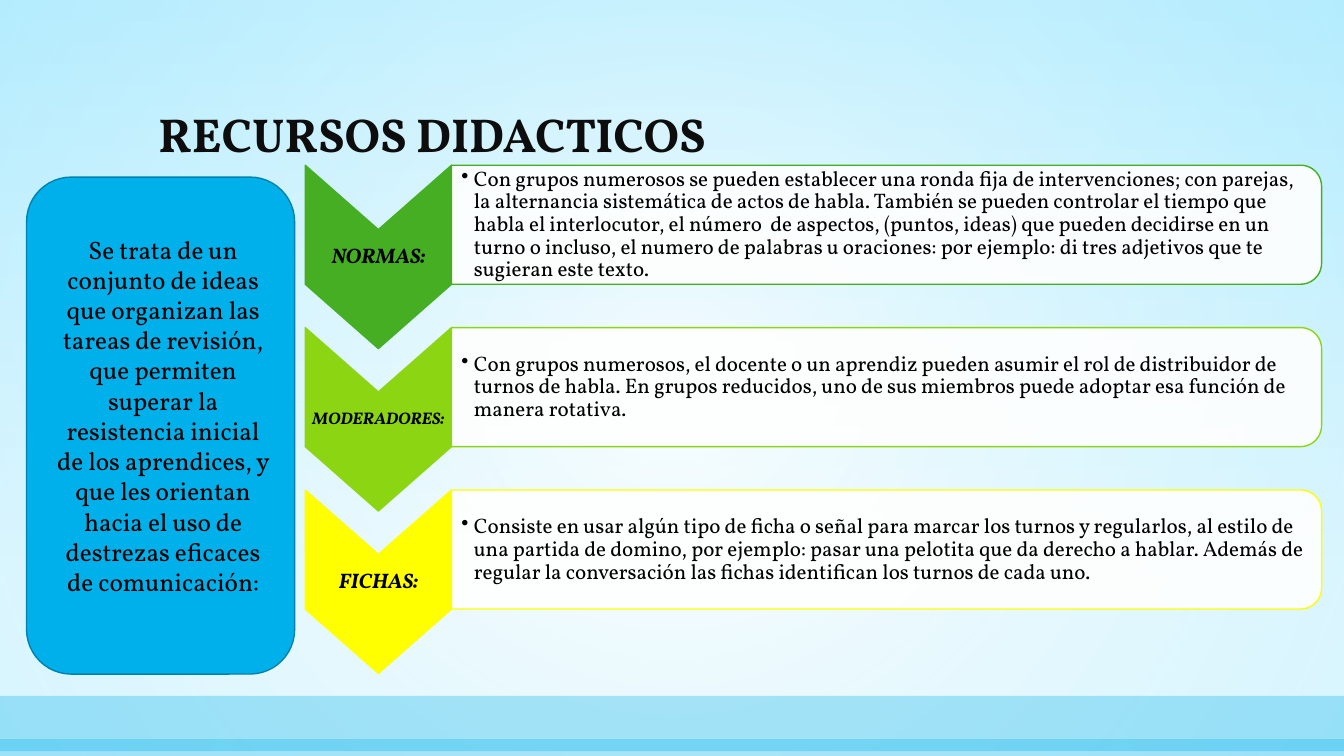
import math
from lxml import etree
from pptx import Presentation
from pptx.dml.color import RGBColor
from pptx.enum.shapes import MSO_SHAPE
from pptx.enum.text import MSO_ANCHOR, MSO_AUTO_SIZE, PP_ALIGN
from pptx.oxml.ns import qn
from pptx.util import Pt

RECT, ROUND = MSO_SHAPE.RECTANGLE, MSO_SHAPE.ROUNDED_RECTANGLE
TOP, MIDDLE, BOTTOM = MSO_ANCHOR.TOP, MSO_ANCHOR.MIDDLE, MSO_ANCHOR.BOTTOM
LEFT, CENTER = PP_ALIGN.LEFT, PP_ALIGN.CENTER
NO_FIT = MSO_AUTO_SIZE.NONE
FONT = "Vollkorn"
WIDE, HIGH = 960, 540
ROW_TOP, ROW_STEP = 118, 116
TAG_LEFT, TAG_WIDE, TAG_HIGH, NOTCH = 218, 104.5, 131, 46
CARD_WIDE, CARD_HIGH, CURVE = 621.5, 85, 15

INTRO = ("Se trata de un conjunto de ideas que organizan las tareas de revisión, "
         "que permiten superar la resistencia inicial de los aprendices, y que les "
         "orientan hacia el uso de destrezas eficaces de comunicación:")
ROWS = [
    ("NORMAS:", 15, "45AE22",
     "Con grupos numerosos se pueden establecer una ronda fija de intervenciones; "
     "con parejas, la alternancia sistemática de actos de habla. También se pueden "
     "controlar el tiempo que habla el interlocutor, el número  de aspectos, (puntos, "
     "ideas) que pueden decidirse en un turno o incluso, el numero de palabras u "
     "oraciones: por ejemplo: di tres adjetivos que te sugieran este texto."),
    ("MODERADORES:", 12, "8CD513",
     "Con grupos numerosos, el docente o un aprendiz pueden asumir el rol de "
     "distribuidor de turnos de habla. En grupos reducidos, uno de sus miembros puede "
     "adoptar esa función de manera rotativa."),
    ("FICHAS:", 15, "FFFF00",
     "Consiste en usar algún tipo de ficha o señal para marcar los turnos y "
     "regularlos, al estilo de una partida de domino, por ejemplo: pasar una pelotita "
     "que da derecho a hablar. Además de regular la conversación las fichas "
     "identifican los turnos de cada uno."),
]


def rgb(color):
    return RGBColor.from_string(color)


def add(parent, tag, **attrs):
    return etree.SubElement(parent, qn(tag), {k: str(v) for k, v in attrs.items()})


def fade(node, alpha):
    """Set the opacity, in percent, of a colour element."""
    add(node, "a:alpha", val=alpha * 1000)


def paint(shape, fill, line=None, alpha=100):
    shape.shadow.inherit = False
    shape.fill.solid()
    shape.fill.fore_color.rgb = rgb(fill)
    if alpha < 100:
        fade(shape.fill._xPr.find(qn("a:solidFill"))[0], alpha)
    if line:
        shape.line.color.rgb = rgb(line)
        shape.line.width = Pt(1)
    else:
        shape.line.fill.background()


def blend(props, stops, radial=False):
    """Replace a solid fill by a gradient of (place, colour, opacity) stops."""
    grad = etree.Element(qn("a:gradFill"), rotWithShape="1")
    group = add(grad, "a:gsLst")
    for place, color, alpha in stops:
        stop = add(group, "a:gs", pos=place * 1000)
        fade(add(stop, "a:srgbClr", val=color), alpha)
    if radial:
        way = add(grad, "a:path", path="circle")
        add(way, "a:fillToRect", l=50000, t=50000, r=50000, b=50000)
    else:
        add(grad, "a:lin", ang=5400000, scaled=0)
    props.replace(props.find(qn("a:solidFill")), grad)


def block(slide, kind, box, fill, line=None, alpha=100):
    shape = slide.shapes.add_shape(kind, *map(Pt, box))
    paint(shape, fill, line, alpha)
    return shape


def outline(slide, points, fill, line, alpha=100):
    points = [(Pt(x), Pt(y)) for x, y in points]
    build = slide.shapes.build_freeform(*points[0])
    build.add_line_segments(points[1:], close=True)
    shape = build.convert_to_shape()
    paint(shape, fill, line, alpha)
    return shape


def write(shape, text, size, color="000000", bold=False, italic=False, align=CENTER,
          anchor=MIDDLE, space=0.9, inset=(7.2, 3.6, 7.2, 3.6)):
    frame = shape.text_frame
    frame.word_wrap = True
    frame.auto_size = NO_FIT
    frame.vertical_anchor = anchor
    (frame.margin_left, frame.margin_top,
     frame.margin_right, frame.margin_bottom) = map(Pt, inset)
    para = frame.paragraphs[0]
    para.alignment = align
    para.line_spacing = space
    run = para.add_run()
    run.text = text
    font = run.font
    font.name, font.size = FONT, Pt(size)
    font.bold, font.italic = bold, italic
    font.color.rgb = rgb(color)
    return para


def bullet(para, indent):
    props = para._p.get_or_add_pPr()
    props.set("marL", str(Pt(indent)))
    props.set("indent", str(-Pt(indent)))
    add(props, "a:buChar", char="•")


def backdrop(slide):
    slide.background.fill.solid()
    blend(slide._element.find(".//" + qn("p:bgPr")),
          [(0, "C8F1FF", 56), (79, "FFFFFF", 100)])
    glow = block(slide, RECT, (0, 0, WIDE, HIGH), "FFFFFF")
    blend(glow._element.spPr, [(0, "FFFFFF", 49), (100, "91E4FF", 35)], True)
    block(slide, RECT, (0, 497, WIDE, 39.5), "00B0EA", alpha=30)
    block(slide, RECT, (0, 528, WIDE, 12), "00B0EA", alpha=28)


def heading(slide, text):
    title = slide.shapes.title
    title.left, title.top, title.width, title.height = map(Pt, (106, 34.5, 749, 85.5))
    write(title, text, 34, "0D0D0D", bold=True, align=LEFT, anchor=BOTTOM)
    slide.shapes._spTree.append(title._element)  # in front of the backdrop


def intro(slide):
    block(slide, ROUND, (19, 126.5, 191.5, 355), "00B0EA", "0082AD")
    note = slide.shapes.add_textbox(*map(Pt, (33, 163.5, 167, 269)))
    write(note, INTRO, 18, anchor=TOP, space=1)


def tag(slide, top, text, size, color):
    """Draw a chevron that points down."""
    left, mid, right = (TAG_LEFT + TAG_WIDE * part for part in (0, 0.5, 1))
    low = top + TAG_HIGH
    points = [(right, top), (right, low - NOTCH), (mid, low),
              (left, low - NOTCH), (left, top), (mid, top + NOTCH)]
    shape = outline(slide, points, color, color)
    write(shape, text, size, bold=True, italic=True, inset=(0.7, 47, 0.7, 47))


def card(slide, top, text, color):
    """Draw a box with its two right corners rounded."""
    left = TAG_LEFT + TAG_WIDE
    right, low = left + CARD_WIDE, top + CARD_HIGH
    arc = [(CURVE * math.sin(math.radians(a)), CURVE * math.cos(math.radians(a)))
           for a in range(0, 91, 5)]
    x = right - CURVE
    points = [(left, top)]
    points += [(x + dx, top + CURVE - dy) for dx, dy in arc]
    points += [(x + dx, low - CURVE + dy) for dx, dy in reversed(arc)]
    points.append((left, low))
    shape = outline(slide, points, "FFFFFF", color, 90)
    bullet(write(shape, text, 15, align=LEFT, inset=(7, 5, 5, 5)), 9)


def main():
    deck = Presentation()
    deck.slide_width, deck.slide_height = Pt(WIDE), Pt(HIGH)
    slide = deck.slides.add_slide(deck.slide_layouts[5])
    backdrop(slide)
    heading(slide, "RECURSOS DIDACTICOS")
    intro(slide)
    for i, (name, size, color, text) in enumerate(ROWS):
        top = ROW_TOP + i * ROW_STEP
        tag(slide, top, name, size, color)
        card(slide, top, text, color)
    deck.save("out.pptx")


if __name__ == "__main__":
    main()
